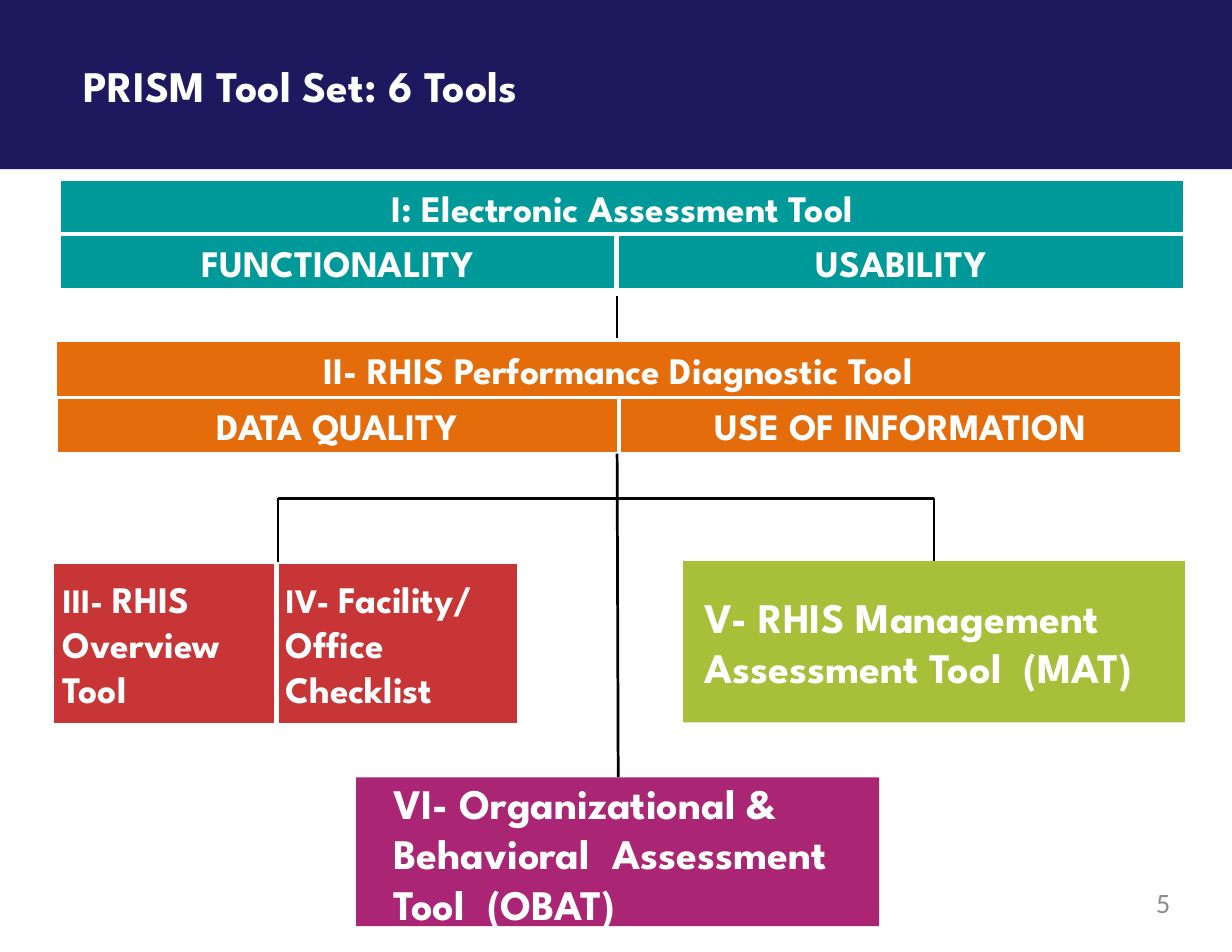
import pptx
import pptx.util
import pptx.dml.color
import pptx.enum.shapes
import pptx.enum.text
import pptx.oxml

Inches = pptx.util.Inches
Pt = pptx.util.Pt
RGBColor = pptx.dml.color.RGBColor
ALIGN = pptx.enum.text.PP_ALIGN
ANCHOR = pptx.enum.text.MSO_ANCHOR

NAVY = RGBColor(0x1E, 0x18, 0x5F)
TEAL = RGBColor(0x00, 0x99, 0x99)
ORANGE = RGBColor(0xE4, 0x6C, 0x0A)
RED = RGBColor(0xC8, 0x35, 0x37)
GREEN = RGBColor(0xA7, 0xBF, 0x39)
PURPLE = RGBColor(0xAA, 0x25, 0x73)
WHITE = RGBColor(0xFF, 0xFF, 0xFF)
BLACK = RGBColor(0x00, 0x00, 0x00)
GRAY = RGBColor(0x8C, 0x8C, 0x8C)

BAR_HEIGHT = 0.5
CENTER_X = 5.51
BRANCH_Y = 4.45


def write_text(shape, lines, size=24, color=WHITE, font="League Spartan", bold=True,
               align=ALIGN.LEFT, anchor=ANCHOR.MIDDLE, left_inset=0):
    """Write one paragraph per line; a line is a list of (text, size) or a string."""
    frame = shape.text_frame
    frame.word_wrap = True
    frame.vertical_anchor = anchor
    frame.margin_left = Inches(left_inset)
    frame.margin_top = frame.margin_right = frame.margin_bottom = 0
    for index, line in enumerate(lines):
        paragraph = frame.paragraphs[0] if index == 0 else frame.add_paragraph()
        paragraph.alignment = align
        parts = [(line, size)] if isinstance(line, str) else line
        for text, part_size in parts:
            run = paragraph.add_run()
            run.text = text
            run.font.name = font
            run.font.size = Pt(part_size)
            run.font.bold = bold
            run.font.color.rgb = color


def add_box(slide, left, top, width, height, fill, border=0):
    shape = slide.shapes.add_shape(
        pptx.enum.shapes.MSO_SHAPE.RECTANGLE,
        Inches(left), Inches(top), Inches(width), Inches(height))
    shape.shadow.inherit = False
    shape.fill.solid()
    shape.fill.fore_color.rgb = fill
    if border:
        shape.line.color.rgb = WHITE
        shape.line.width = Pt(border)
    else:
        shape.line.fill.background()
    return shape


def add_bar(slide, left, top, width, fill, text, border=2):
    bar = add_box(slide, left, top, width, BAR_HEIGHT, fill, border)
    write_text(bar, [text], align=ALIGN.CENTER)


def add_label(slide, left, top, width, height, text, **text_format):
    label = slide.shapes.add_textbox(
        Inches(left), Inches(top), Inches(width), Inches(height))
    write_text(label, [text], anchor=ANCHOR.TOP, **text_format)


def add_line(slide, x1, y1, x2, y2, color=BLACK, width=1.5):
    line = slide.shapes.add_connector(
        pptx.enum.shapes.MSO_CONNECTOR.STRAIGHT,
        Inches(x1), Inches(y1), Inches(x2), Inches(y2))
    line.line.color.rgb = color
    line.line.width = Pt(width)
    effects = pptx.oxml.parse_xml(
        '<a:effectLst xmlns:a="http://schemas.openxmlformats.org/drawingml/2006/main"/>')
    line._element.spPr.append(effects)


def add_header(slide):
    add_box(slide, 0, 0, 11, 1.51, NAVY)
    add_label(slide, 0.75, 0.53, 8.66, 0.47, "PRISM Tool Set: 6 Tools", size=28)


def add_branches(slide):
    left, right = 2.48, 8.34
    add_line(slide, left, BRANCH_Y, right, BRANCH_Y)
    for x in (left, right):
        add_line(slide, x, BRANCH_Y, x, 5.02)


def add_lower_tools(slide):
    red_top, red_height, divider_x = 5.03, 1.43, 2.47
    for left, width, number, first, others in (
            (0.48, 2.09, "III- ", "RHIS", ["Overview", "Tool"]),
            (divider_x, 2.15, "IV- ", "Facility/", ["Office", "Checklist"])):
        box = add_box(slide, left, red_top, width, red_height, RED, 0.75)
        write_text(box, [[(number, 22), (first, 24)], *others], left_inset=0.08)
    add_line(slide, divider_x, red_top, divider_x, red_top + red_height, WHITE, 3)

    management = add_box(slide, 6.1, 5.01, 4.48, 1.44, GREEN)
    write_text(management, ["V- RHIS Management", "Assessment Tool  (MAT)"],
               size=27, left_inset=0.19)


def add_upper_tools(slide):
    add_bar(slide, 0.53, 1.6, 10.05, TEAL, "I: Electronic Assessment Tool")
    add_bar(slide, 0.5, 3.05, 10.04, ORANGE, "II- RHIS Performance Diagnostic Tool", border=1)
    add_bar(slide, 0.5, 3.55, 5.02, ORANGE, "DATA QUALITY")
    add_bar(slide, 5.53, 3.55, 5.02, ORANGE, "USE OF INFORMATION")
    add_line(slide, CENTER_X, 2.64, CENTER_X, 3.02)
    add_bar(slide, 0.53, 2.09, 4.97, TEAL, "FUNCTIONALITY")
    add_bar(slide, CENTER_X, 2.09, 5.07, TEAL, "USABILITY")


def add_behavioral_tool(slide):
    top = 6.94
    add_line(slide, CENTER_X + 0.01, top, CENTER_X, 4.05, width=1.75)
    box = add_box(slide, 3.18, top, 4.67, 1.33, PURPLE)
    write_text(box, ["VI- Organizational & Behavioral  Assessment Tool  (OBAT)"],
               size=27, anchor=ANCHOR.TOP, left_inset=0.33)


def main():
    presentation = pptx.Presentation()
    presentation.slide_width = Inches(11)
    presentation.slide_height = Inches(8.5)
    slide = presentation.slides.add_slide(presentation.slide_layouts[6])
    add_header(slide)
    add_branches(slide)
    add_lower_tools(slide)
    add_upper_tools(slide)
    add_behavioral_tool(slide)
    add_label(slide, 7.92, 7.91, 2.53, 0.42, "5", size=18, color=GRAY,
              font="Calibri", bold=False, align=ALIGN.RIGHT)
    presentation.save("out.pptx")


if __name__ == "__main__":
    main()
